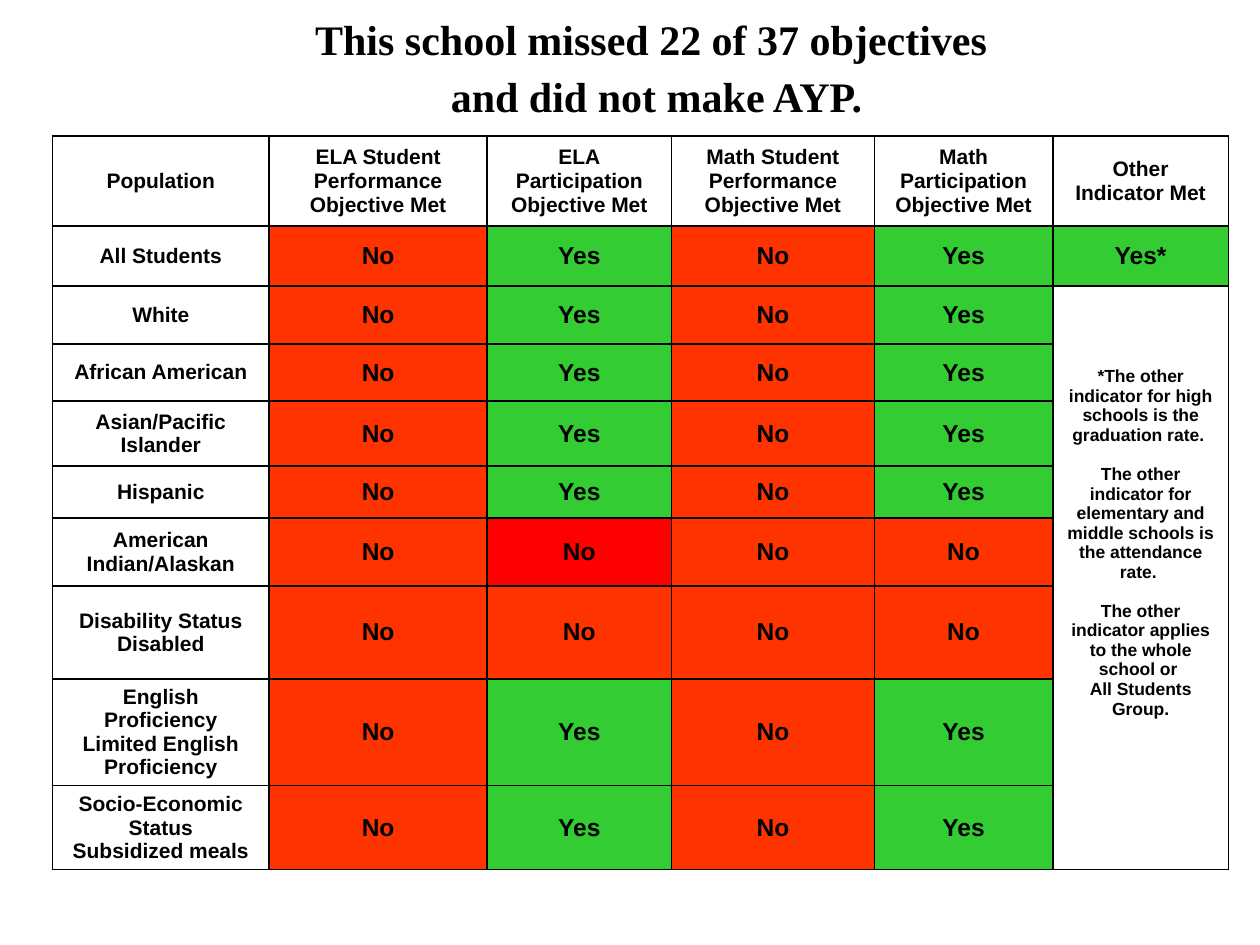
"""Build a slide with a table of the yearly progress objectives of a school."""
from dataclasses import dataclass
from typing import Any, Optional

import pptx
import pptx.dml.color
import pptx.enum.text
import pptx.oxml
import pptx.oxml.ns
import pptx.util
from pptx.dml.color import RGBColor
from pptx.util import Pt

BLACK = RGBColor(0x00, 0x00, 0x00)
WHITE = RGBColor(0xFF, 0xFF, 0xFF)
GREEN = RGBColor(0x33, 0xCC, 0x33)
ORANGE = RGBColor(0xFF, 0x33, 0x00)
RED = RGBColor(0xFF, 0x00, 0x00)

CENTER = pptx.enum.text.PP_ALIGN.CENTER
MIDDLE = pptx.enum.text.MSO_ANCHOR.MIDDLE
TOP = pptx.enum.text.MSO_ANCHOR.TOP
NO_FIT = pptx.enum.text.MSO_AUTO_SIZE.NONE

TITLE_FONT = {"name": "Times New Roman", "size": Pt(24), "bold": True}
LABEL_FONT = {"name": "Arial", "size": Pt(12), "bold": True}
ANSWER_FONT = {"name": "Arial", "size": Pt(14), "bold": True}
NOTE_FONT = {"name": "Arial", "size": Pt(10), "bold": True}


@dataclass(frozen=True)
class Answer:
    """The word and the fill of one objective."""

    text: str
    fill: RGBColor


@dataclass(frozen=True)
class Group:
    """One student population with its answers."""

    population: str
    height: float
    answers: tuple[Answer, ...]


YES = Answer("Yes", GREEN)
YES_STARRED = Answer("Yes*", GREEN)
NO = Answer("No", ORANGE)
NO_MARKED = Answer("No", RED)
MIXED = (NO, YES, NO, YES)

TITLE = "This school missed 22 of 37 objectives \nand did not make AYP."
HEADER_HEIGHT = 51.4
HEADERS = (
    "Population",
    "ELA Student Performance Objective Met",
    "ELA\nParticipation Objective Met",
    "Math Student Performance Objective Met",
    "Math Participation Objective Met",
    "Other Indicator Met",
)
COLUMN_WIDTHS = (123.8, 124.6, 105.4, 115.9, 102, 100.3)
GROUPS = (
    Group("All Students", 34.3, MIXED + (YES_STARRED,)),
    Group("White", 33.1, MIXED),
    Group("African American", 32.7, MIXED),
    Group("Asian/Pacific Islander", 37.1, MIXED),
    Group("Hispanic", 29.7, MIXED),
    Group("American Indian/Alaskan", 38.8, (NO, NO_MARKED, NO, NO)),
    Group("Disability Status\nDisabled", 53.2, (NO,) * 4),
    Group("English Proficiency\nLimited English Proficiency", 60.6, MIXED),
    Group("Socio-Economic Status\nSubsidized meals", 48, MIXED),
)
NOTE = (
    "*The other indicator for high schools is the graduation rate. \n"
    "The other indicator for elementary and middle schools is the attendance rate. \n"
    "The other indicator applies to the whole school or \n"
    "All Students Group."
)
NOTE_GAPS = (0, 11.2, 11.2, 0)


def set_attributes(target: Any, values: dict[str, Any]) -> None:
    """Set every named attribute on the target."""
    for name, value in values.items():
        setattr(target, name, value)


def write_text(frame: Any, text: str, font: dict[str, Any], layout: dict[str, Any]) -> None:
    """Write centred paragraphs, one for each line of the text."""
    for index, line in enumerate(text.split("\n")):
        para = frame.paragraphs[0] if index == 0 else frame.add_paragraph()
        set_attributes(para, {"alignment": CENTER, **layout})
        span = para.add_run()
        span.text = line
        set_attributes(span.font, font)
        span.font.color.rgb = BLACK


def draw_borders(cell: Any) -> None:
    """Give all four sides of a cell a thin black line."""
    properties = cell._tc.get_or_add_tcPr()
    namespace = pptx.oxml.ns.nsdecls("a")
    for position, side in enumerate(("lnL", "lnR", "lnT", "lnB")):
        line = pptx.oxml.parse_xml(
            f'<a:{side} {namespace} w="{Pt(1)}"><a:solidFill>'
            f'<a:srgbClr val="{BLACK}"/></a:solidFill></a:{side}>'
        )
        properties.insert(position, line)


def fill_cell(cell: Any, text: str, font: dict[str, Any], fill: Optional[RGBColor] = None) -> None:
    """Write a cell and paint it, or leave it clear."""
    cell.vertical_anchor = MIDDLE
    write_text(cell.text_frame, text, font, {})
    if fill is None:
        cell.fill.background()
    else:
        cell.fill.solid()
        cell.fill.fore_color.rgb = fill


def add_title(page: Any) -> None:
    """Place and format the title."""
    box = page.shapes.title
    set_attributes(box, {"left": Pt(48.2), "top": Pt(12.2), "width": Pt(653.8), "height": Pt(63.4)})
    set_attributes(box.text_frame, {"word_wrap": True, "auto_size": NO_FIT, "vertical_anchor": TOP})
    write_text(box.text_frame, TITLE, TITLE_FONT, {"line_spacing": 0.7, "space_before": Pt(12)})


def add_note(table: Any) -> None:
    """Merge the cells below the other indicator and explain it there."""
    last = len(HEADERS) - 1
    cell = table.cell(2, last)
    cell.merge(table.cell(len(GROUPS), last))
    fill_cell(cell, NOTE, NOTE_FONT, WHITE)
    cell.margin_bottom = Pt(43.6)
    for para, gap in zip(cell.text_frame.paragraphs, NOTE_GAPS):
        para.space_before = Pt(gap)


def add_objectives(page: Any) -> None:
    """Draw the table of objectives."""
    heights = (HEADER_HEIGHT, *(group.height for group in GROUPS))
    table = page.shapes.add_table(
        len(heights), len(HEADERS), Pt(30), Pt(77.8), Pt(sum(COLUMN_WIDTHS)), Pt(sum(heights))
    ).table
    set_attributes(table, {"first_row": False, "horz_banding": False})
    for column, width in zip(table.columns, COLUMN_WIDTHS):
        column.width = Pt(width)
    for row, height in zip(table.rows, heights):
        row.height = Pt(height)
    for index, header in enumerate(HEADERS):
        fill_cell(table.cell(0, index), header, LABEL_FONT)
    for row_index, group in enumerate(GROUPS, 1):
        fill_cell(table.cell(row_index, 0), group.population, LABEL_FONT)
        for index, answer in enumerate(group.answers, 1):
            fill_cell(table.cell(row_index, index), answer.text, ANSWER_FONT, answer.fill)
    add_note(table)
    for cell in table.iter_cells():
        draw_borders(cell)


def main() -> None:
    """Build and save the deck."""
    deck = pptx.Presentation()
    set_attributes(deck, {"slide_width": Pt(720), "slide_height": Pt(540)})
    page = deck.slides.add_slide(deck.slide_layouts.get_by_name("Title Only"))
    add_objectives(page)
    add_title(page)
    deck.save("out.pptx")


if __name__ == "__main__":
    main()
